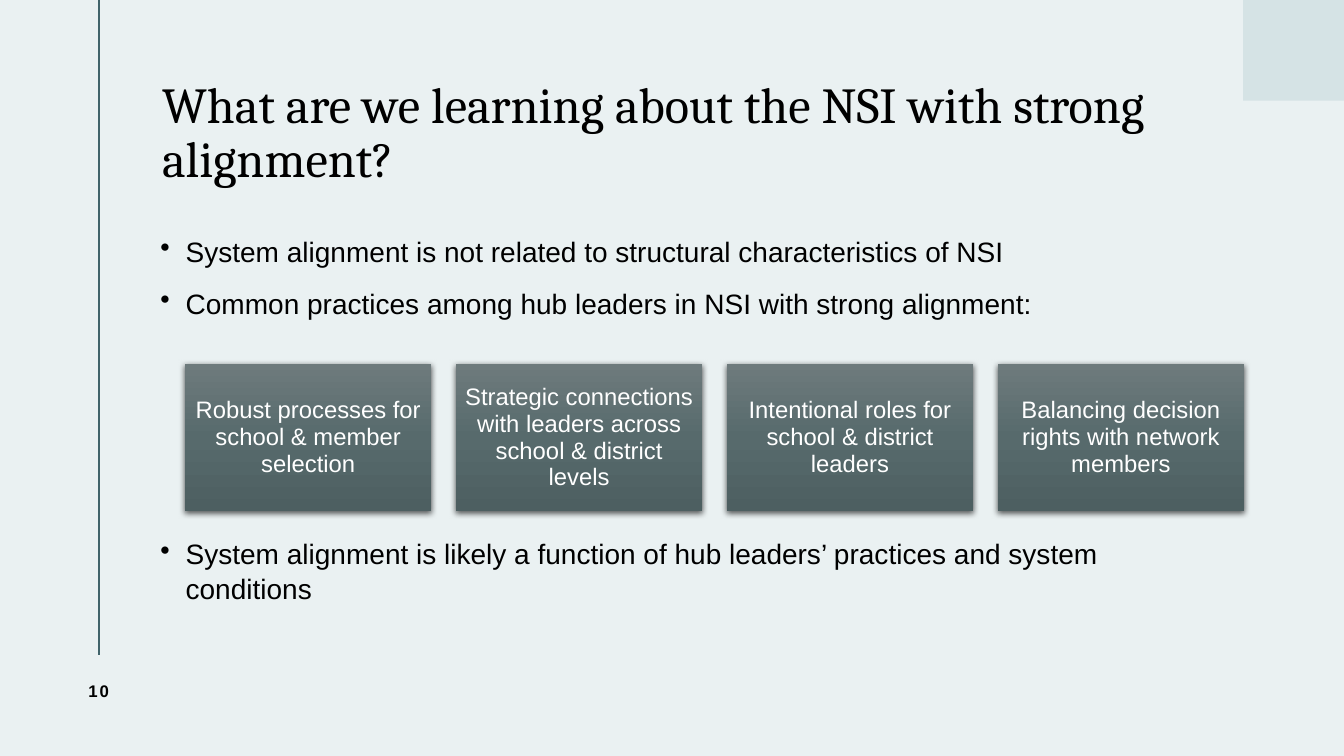
from pptx import Presentation
from pptx.dml.color import RGBColor as RGB
from pptx.enum.shapes import MSO_CONNECTOR as Conn, MSO_SHAPE as Shape
from pptx.enum.text import MSO_ANCHOR as Anchor, PP_ALIGN as Align
from pptx.oxml import parse_xml as to_xml
from pptx.oxml.ns import nsdecls, qn
from pptx.util import Inches, Pt
from lxml.etree import SubElement as Sub

PALE = RGB(0xEA, 0xF1, 0xF2)
MIST = RGB(0xD5, 0xE3, 0xE5)
TEAL = RGB(0x40, 0x63, 0x6A)
BLACK = RGB(0, 0, 0)
WHITE = RGB(255, 255, 255)
SHADE = [(0, RGB(0x6E, 0x7B, 0x7D)), (50, RGB(0x57, 0x6A, 0x6C)),
         (100, RGB(0x4D, 0x5F, 0x61))]

COLS, ROWS = 160, 90
HEAD, BODY = "Cambria", "Arial"


class Deck:
    """Style and current slide; lengths are columns and rows of the grid."""

    def __init__(self):
        self.prs = Presentation()
        self.prs.slide_width, self.prs.slide_height = Inches(40 / 3), Inches(7.5)
        self.slide = self.prs.slides.add_slide(self.prs.slide_layouts[6])
        self.shapes = self.slide.shapes
        fill = self.slide.background.fill
        fill.solid()
        fill.fore_color.rgb = PALE

    def grid(self, *cells):
        wide = self.prs.slide_width / COLS
        high = self.prs.slide_height / ROWS
        return [round(n * (high if i % 2 else wide)) for i, n in enumerate(cells)]

    def rule(self, x1, y1, x2, y2):
        line = self.shapes.add_connector(Conn.STRAIGHT, *self.grid(x1, y1, x2, y2))
        line.line.color.rgb = TEAL
        line.line.width = Pt(1.5)
        Sub(line._element.spPr, qn("a:effectLst"))

    def block(self, *box):
        rect = self.shapes.add_shape(Shape.RECTANGLE, *self.grid(*box))
        rect.shadow.inherit = False
        rect.line.fill.background()
        rect.fill.solid()
        rect.fill.fore_color.rgb = MIST
        return rect

    def words(self, frame, lines, size, color=BLACK, font=BODY, align=Align.LEFT,
              space=1.0, after=0, anchor=Anchor.MIDDLE, pads=(0, 0, 0, 0)):
        frame.word_wrap = True
        frame.vertical_anchor = anchor
        (frame.margin_left, frame.margin_top,
         frame.margin_right, frame.margin_bottom) = map(Inches, pads)
        for i, line in enumerate(lines):
            para = frame.add_paragraph() if i else frame.paragraphs[0]
            para.text = line
            para.alignment = align
            para.line_spacing = space
            para.space_after = Pt(after)
            para.font.size, para.font.name = Pt(size), font
            para.font.color.rgb = color
        return frame.paragraphs

    def text(self, box, lines, size, **style):
        frame = self.shapes.add_textbox(*self.grid(*box)).text_frame
        return self.words(frame, lines, size, **style)

    def points(self, box, lines):
        for para in self.text(box, lines, 20, space=1.05, after=12,
                              anchor=Anchor.TOP):
            props = para._p.get_or_add_pPr()
            props.set("marL", str(Inches(0.25)))
            props.set("indent", str(-Inches(0.25)))
            mark = to_xml(f'<a:buChar {nsdecls("a")} char="•"/>')
            props.insert_element_before(mark, "a:tabLst", "a:defRPr", "a:extLst")

    def card(self, box, label):
        rect = self.block(*box)
        props = rect._element.spPr
        # Three-stop gradient
        stops = "".join(f'<a:gs pos="{at * 1000}"><a:srgbClr val="{tone}"/></a:gs>'
                        for at, tone in SHADE)
        props.replace(props.find(qn("a:solidFill")), to_xml(
            f'<a:gradFill {nsdecls("a")} rotWithShape="1"><a:gsLst>{stops}</a:gsLst>'
            '<a:lin ang="5400000" scaled="0"/></a:gradFill>'))
        # Soft shadow below
        props.find(qn("a:effectLst")).append(to_xml(
            f'<a:outerShdw {nsdecls("a")} blurRad="{Pt(4.5)}" dist="{Pt(1.5)}" '
            'dir="5400000" algn="ctr" rotWithShape="0"><a:srgbClr val="000000">'
            '<a:alpha val="63000"/></a:srgbClr></a:outerShdw>'))
        self.words(rect.text_frame, [label], 17, color=WHITE, align=Align.CENTER,
                   space=0.94, pads=(0.07,) * 4)


def main():
    deck = Deck()

    # Frame
    deck.rule(11.8, 0, 11.8, 78)
    deck.block(148, 0, 12, 12)

    # Title
    deck.text((19.3, 6.6, 120.1, 18.7),
              ["What are we learning about the NSI with strong alignment?"],
              36, font=HEAD, space=0.9, pads=(0, 0.05, 0.1, 0.05))

    # Bullets above and below the cards
    deck.points((19.1, 27.7, 112.2, 12), [
        "System alignment is not related to structural characteristics of NSI",
        "Common practices among hub leaders in NSI with strong alignment:"])
    deck.points((19.1, 63.7, 112.2, 12), [
        "System alignment is likely a function of hub leaders’ practices "
        "and system conditions"])

    # Practice cards
    left, wide, step = 22.05, 29.3, 32.25
    for i, label in enumerate([
            "Robust processes for school & member selection",
            "Strategic connections with leaders across school & district levels",
            "Intentional roles for school & district leaders",
            "Balancing decision rights with network members"]):
        deck.card((left + i * step, 43.3, wide, 17.6), label)

    # Page number
    page = deck.text((5.4, 78, 12.7, 8.5), ["10"], 12, align=Align.CENTER,
                     pads=(0.1, 0.05, 0.1, 0.05))[0]
    page.font.bold = True
    page.runs[0]._r.get_or_add_rPr().set("spc", "150")

    deck.prs.save("out.pptx")


if __name__ == "__main__":
    main()
